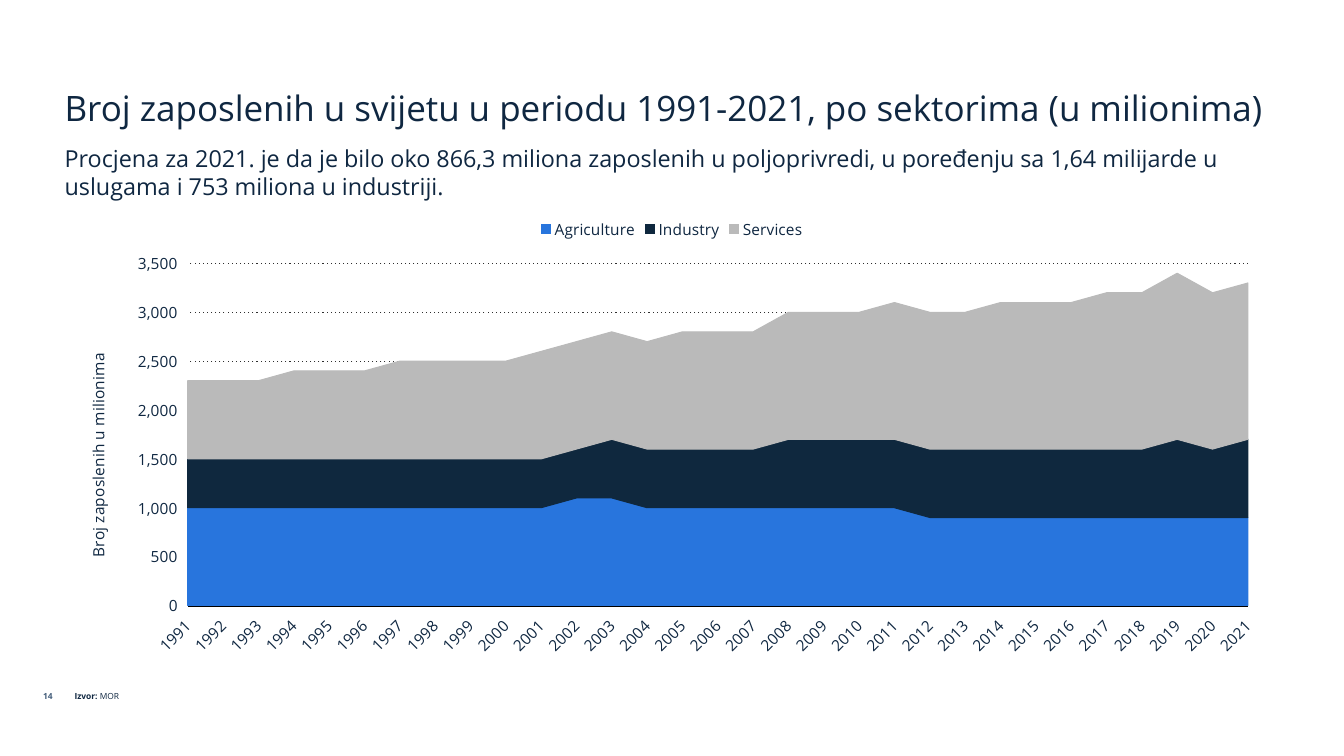
from dataclasses import dataclass

from lxml import etree
from pptx import Presentation
from pptx.chart.data import CategoryChartData
from pptx.dml.color import RGBColor
from pptx.enum.chart import XL_CHART_TYPE, XL_LEGEND_POSITION, XL_TICK_LABEL_POSITION, XL_TICK_MARK
from pptx.enum.dml import MSO_LINE
from pptx.enum.text import MSO_ANCHOR, PP_ALIGN
from pptx.oxml.ns import qn
from pptx.util import Cm, Pt

AREA_STACKED = XL_CHART_TYPE.AREA_STACKED
LEGEND_TOP = XL_LEGEND_POSITION.TOP
LABELS_LOW = XL_TICK_LABEL_POSITION.LOW
NO_TICK = XL_TICK_MARK.NONE
DOTTED = MSO_LINE.ROUND_DOT
TOP, BOTTOM = MSO_ANCHOR.TOP, MSO_ANCHOR.BOTTOM
LEFT, RIGHT = PP_ALIGN.LEFT, PP_ALIGN.RIGHT


@dataclass(frozen=True)
class Theme:
    """Colours, font and type sizes of the slide."""
    font: str = "Open Sans"
    ink: str = "0F2741"
    muted: str = "455F7C"
    axis: str = "000000"
    grid: str = "2F2F2F"
    title: float = 25
    subtitle: float = 16.7
    chart: float = 11
    footer: float = 6


THEME = Theme()
CHART_WIDTH, CHART_HEIGHT = 30.61, 11.53
YEARS = [str(year) for year in range(1991, 2022)]
SECTORS = [
    ("Agriculture", "2875DD",
     [1000] * 11 + [1100] * 2 + [1000] * 8 + [900] * 10),
    ("Industry", "0F283E",
     [500] * 12 + [600] * 5 + [700] * 11 + [800, 700, 800]),
    ("Services", "BABABA",
     [800] * 3 + [900] * 3 + [1000] * 4 + [1100] * 4 + [1200] * 3 + [1300] * 3
     + [1400] * 3 + [1500] * 3 + [1600] * 2 + [1700, 1600, 1600]),
]


def set_font(font, size, color=THEME.ink, bold=False):
    """Apply the theme font with a size, colour and weight."""
    font.name = THEME.font
    font.size = Pt(size)
    font.bold = bold
    font.color.rgb = RGBColor.from_string(color)


def add_text(page, frame, spans, size, color=THEME.ink, anchor=TOP, align=LEFT):
    """Add a text box holding one paragraph of (text, bold) spans."""
    box = page.shapes.add_textbox(*map(Cm, frame))
    box.text_frame.word_wrap = True
    box.text_frame.vertical_anchor = anchor
    para = box.text_frame.paragraphs[0]
    para.alignment = align
    for text, bold in spans:
        span = para.add_run()
        span.text = text
        set_font(span.font, size, color, bold)


def set_layout(layout, **settings):
    """Write a manual layout into a chart layout element."""
    for child in list(layout):
        layout.remove(child)
    manual = etree.SubElement(layout, qn("c:manualLayout"))
    for tag, value in settings.items():
        etree.SubElement(manual, qn(f"c:{tag}")).set("val", str(value))


def place_plot(chart):
    """Fix the inner plot area within the chart frame."""
    plot_area = chart.plots[0]._element.getparent()
    layout = plot_area.find(qn("c:layout"))
    if layout is None:
        layout = etree.Element(qn("c:layout"))
        plot_area.insert(0, layout)
    set_layout(layout, layoutTarget="inner", xMode="edge", yMode="edge",
               x=3.1 / CHART_WIDTH, y=1.41 / CHART_HEIGHT,
               w=26.72 / CHART_WIDTH, h=8.62 / CHART_HEIGHT)


def style_axis(axis):
    """Set what both axes share."""
    axis.major_tick_mark = axis.minor_tick_mark = NO_TICK
    axis.tick_label_position = LABELS_LOW
    set_font(axis.tick_labels.font, THEME.chart)


def style_year_axis(axis):
    """Show every year on a slant above a solid base line."""
    style_axis(axis)
    axis.has_major_gridlines = False
    axis.format.line.color.rgb = RGBColor.from_string(THEME.axis)
    axis.format.line.width = Pt(2)
    body = axis._element.find(qn("c:txPr")).find(qn("a:bodyPr"))
    body.set("rot", "-2700000")
    body.set("vert", "horz")
    skip = etree.Element(qn("c:tickLblSkip"))
    skip.set("val", "1")
    axis._element.find(qn("c:noMultiLvlLbl")).addprevious(skip)


def style_value_axis(axis, title):
    """Set the scale, dotted gridlines and upright axis title."""
    style_axis(axis)
    axis.minimum_scale, axis.maximum_scale, axis.major_unit = 0, 3500, 500
    axis.tick_labels.number_format = "#,##0"
    axis.tick_labels.number_format_is_linked = False
    axis.format.line.fill.background()
    axis.has_major_gridlines = True
    grid = axis.major_gridlines.format.line
    grid.color.rgb = RGBColor.from_string(THEME.grid)
    grid.width = Pt(0.75)
    grid.dash_style = DOTTED
    for dash in axis._element.iter(qn("a:prstDash")):
        dash.set("val", "dot")
    axis._element.find(qn("c:crossBetween")).set("val", "midCat")
    frame = axis.axis_title.text_frame
    span = frame.paragraphs[0].add_run()
    span.text = title
    set_font(span.font, THEME.chart)
    body = frame._txBody.find(qn("a:bodyPr"))
    body.set("rot", "-5400000")
    body.set("vert", "horz")
    holder = axis.axis_title._element
    layout = holder.find(qn("c:layout"))
    if layout is None:
        layout = etree.Element(qn("c:layout"))
        holder.find(qn("c:tx")).addnext(layout)
    set_layout(layout, xMode="edge", yMode="edge",
               x=0.46 / CHART_WIDTH, y=3.6 / CHART_HEIGHT)


def add_sector_chart(page, left, top):
    """Add the stacked area chart of employment by sector."""
    data = CategoryChartData(number_format="#,##0")
    data.categories = YEARS
    for name, _, values in SECTORS:
        data.add_series(name, values)
    frame = map(Cm, (left, top, CHART_WIDTH, CHART_HEIGHT))
    chart = page.shapes.add_chart(AREA_STACKED, *frame, data).chart
    set_font(chart.font, THEME.chart)
    chart.has_title = False
    chart.has_legend = True
    chart.legend.position = LEGEND_TOP
    chart.legend.include_in_layout = False
    set_font(chart.legend.font, THEME.chart)
    chart.plots[0].vary_by_categories = False
    for series, (_, color, _) in zip(chart.plots[0].series, SECTORS):
        series.format.fill.solid()
        series.format.fill.fore_color.rgb = RGBColor.from_string(color)
        series.format.line.color.rgb = RGBColor.from_string(color)
        series.format.line.width = Pt(0.75)
    style_year_axis(chart.category_axis)
    style_value_axis(chart.value_axis, "Broj zaposlenih u milionima")
    place_plot(chart)


def main():
    """Build the slide and save it."""
    deck = Presentation()
    deck.slide_width, deck.slide_height = Cm(33.87), Cm(19.05)
    page = deck.slides.add_slide(deck.slide_layouts[6])
    add_text(page, (1.63, 17.3, 26.59, 1.47), [("Izvor: ", True), ("MOR", False)], THEME.footer)
    add_sector_chart(page, 1.63, 5.23)
    add_text(page, (-0.25, 17.3, 1.83, 0.76), [("14", True)], THEME.footer, THEME.muted, align=RIGHT)
    add_text(page, (1.38, 1.19, 31.09, 2.18),
             [("Broj zaposlenih u svijetu u periodu 1991-2021, po sektorima (u milionima)", False)],
             THEME.title, anchor=BOTTOM)
    add_text(page, (1.38, 3.51, 31.09, 1.63),
             [("Procjena za 2021. je da je bilo oko 866,3 miliona zaposlenih u poljoprivredi, "
               "u poređenju sa 1,64 milijarde u uslugama i 753 miliona u industriji.", False)],
             THEME.subtitle)
    deck.save("out.pptx")


if __name__ == "__main__":
    main()
